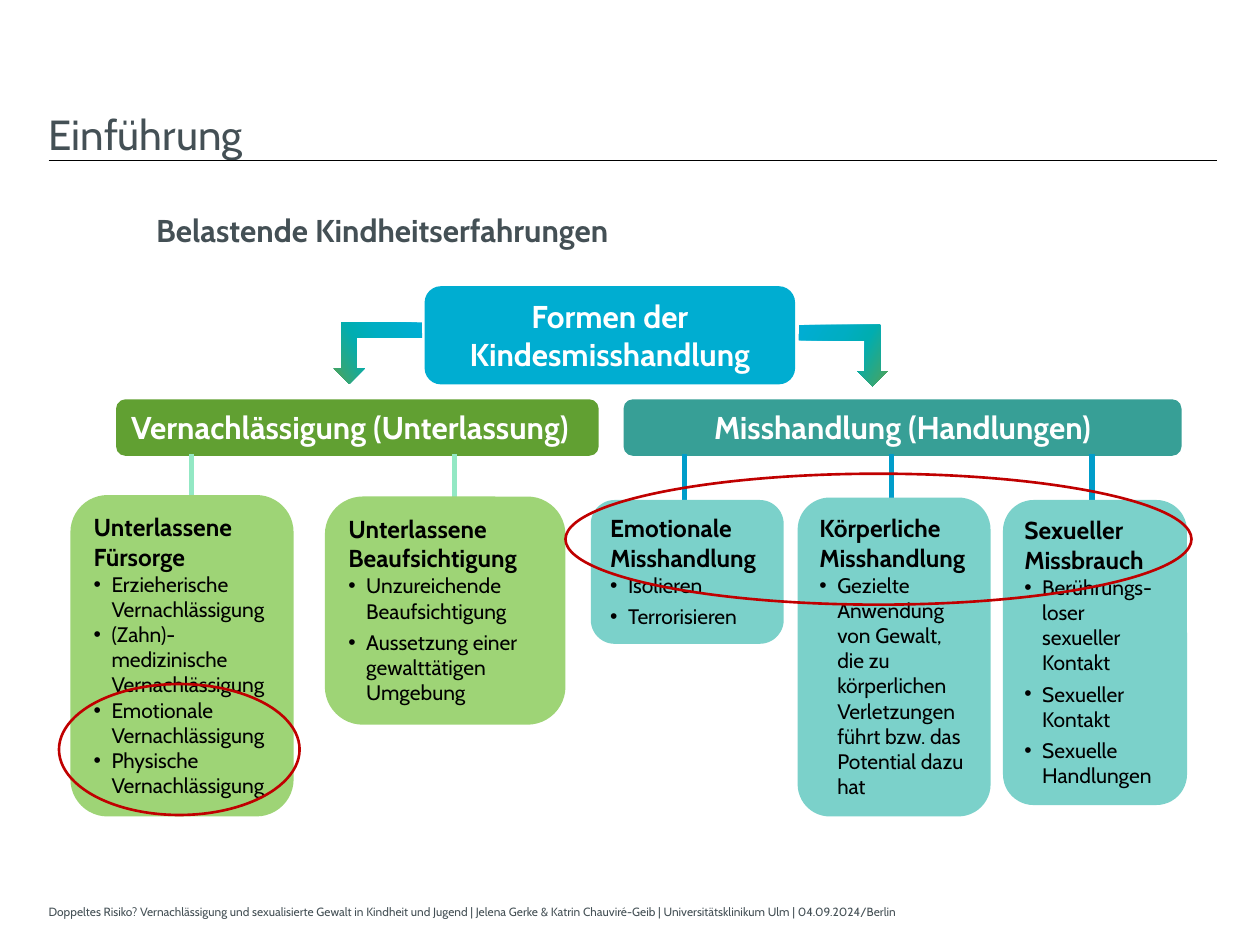
from dataclasses import dataclass

from lxml.etree import SubElement
from pptx import Presentation
from pptx.dml.color import RGBColor
from pptx.enum.shapes import MSO_CONNECTOR, MSO_SHAPE
from pptx.enum.text import MSO_ANCHOR, MSO_AUTO_SIZE, PP_ALIGN
from pptx.oxml.ns import qn
from pptx.util import Cm, Pt


@dataclass(frozen=True)
class Theme:
    """Colours, font and type sizes of the slide."""
    font: str = "Cabin"
    ink: str = "445055"
    black: str = "000000"
    white: str = "FFFFFF"
    blue: str = "00ADD1"
    green: str = "61A032"
    teal: str = "379F96"
    lime: str = "9ED476"
    aqua: str = "7BD1CA"
    mint: str = "93E8C4"
    sea: str = "009DCA"
    red: str = "C00000"
    blend: tuple = ((0, "00ADD4"), (39, "00ADC3"), (62, "00ADB1"),
                    (86, "31A77C"), (100, "61A047"))
    title: float = 24
    head: float = 18
    sub: float = 14
    body: float = 12
    foot: float = 6.8


T = Theme()


def write(frame, words, size=T.body, color=T.black, bold=False,
          align=PP_ALIGN.LEFT, bullet=False, gap=0):
    """Add one formatted paragraph to a text frame."""
    para = frame.paragraphs[0] if not frame.text else frame.add_paragraph()
    if bullet:
        props = para._p.get_or_add_pPr()
        props.set("marL", str(Cm(0.36)))
        props.set("indent", str(-Cm(0.36)))
        SubElement(props, qn("a:buFont"), typeface="Arial")
        SubElement(props, qn("a:buChar"), char="•")
    para.alignment = align
    para.space_before = Pt(gap)
    run = para.add_run()
    run.text = words
    run.font.name, run.font.size, run.font.bold = T.font, Pt(size), bold
    run.font.color.rgb = RGBColor.from_string(color)


def setup(frame, pad=(0.25, 0.13, 0.25, 0.13), anchor=MSO_ANCHOR.TOP):
    """Set wrapping, anchor and margins of a text frame."""
    frame.word_wrap = True
    frame.auto_size = MSO_AUTO_SIZE.NONE
    frame.vertical_anchor = anchor
    frame.margin_left, frame.margin_top, frame.margin_right, frame.margin_bottom = map(Cm, pad)
    return frame


def shape(slide, kind, box, fill=None, line=None):
    """Add a flat preset shape."""
    item = slide.shapes.add_shape(kind, *map(Cm, box))
    item.shadow.inherit = False
    if fill:
        item.fill.solid()
        item.fill.fore_color.rgb = RGBColor.from_string(fill)
    else:
        item.fill.background()
    if line:
        item.line.color.rgb = RGBColor.from_string(line)
        item.line.width = Pt(1.5)
    else:
        item.line.fill.background()
    return item


def rule(slide, start, end, color, width):
    """Add a straight line without shadow."""
    line = slide.shapes.add_connector(MSO_CONNECTOR.STRAIGHT, *map(Cm, start + end))
    line.line.color.rgb = RGBColor.from_string(color)
    line.line.width = Pt(width)
    SubElement(line._element.spPr, qn("a:effectLst"))


def label(slide, box, words, fill, align=PP_ALIGN.CENTER):
    """Add a rounded box with a white heading."""
    item = shape(slide, MSO_SHAPE.ROUNDED_RECTANGLE, box, fill)
    write(setup(item.text_frame), words, size=T.head, color=T.white, bold=True, align=align)


def arrow(slide, box, flip=False):
    """Add a bent arrow that points down, blended from blue to green."""
    item = shape(slide, MSO_SHAPE.BENT_UP_ARROW, box)
    item.rotation = 180
    props = item._element.spPr
    if flip:
        props.find(qn("a:xfrm")).set("flipH", "1")
    grad = SubElement(props, qn("a:gradFill"), rotWithShape="1")
    stops = SubElement(grad, qn("a:gsLst"))
    for pos, color in T.blend:
        stop = SubElement(stops, qn("a:gs"), pos=str(pos * 1000))
        SubElement(stop, qn("a:srgbClr"), val=color)
    SubElement(grad, qn("a:lin"), ang=str(330 * 60000), scaled="0")
    props.replace(props.find(qn("a:noFill")), grad)


def header(slide, box):
    """Place the title, its rule and the subtitle."""
    left, top, width, height = box
    title = slide.shapes.title
    title.left, title.top, title.width, title.height = map(Cm, (left, top, 18, height))
    pad = (0, 0.15, 0, 0.1)
    write(setup(title.text_frame, pad), "Einführung", size=T.title, color=T.ink)
    base = top + 1.2
    rule(slide, (left, base), (left + width, base), T.black, 0.5)
    sub = slide.shapes.add_textbox(*map(Cm, (left + 2.17, top + 2.08, 18.44, 1.68)))
    write(setup(sub.text_frame, pad), "Belastende Kindheitserfahrungen",
          size=T.head, color=T.ink, bold=True)


def root(slide, box):
    """Place the top box with an arrow to each branch."""
    left, top, width, _ = box
    label(slide, box, "Formen der Kindesmisshandlung", T.blue)
    arrow(slide, (left - 1.83, top + 0.73, 1.78, 1.24))
    arrow(slide, (left + width + 0.07, top + 0.78, 1.8, 1.24), flip=True)


def card(slide, box, head, items, fill, gap):
    """Place a rounded card with a heading and bullets."""
    item = shape(slide, MSO_SHAPE.ROUNDED_RECTANGLE, box, fill)
    frame = setup(item.text_frame)
    write(frame, head, size=T.sub, bold=True)
    for num, words in enumerate(items):
        write(frame, words, bullet=True, gap=gap if num else 0)


def branch(slide, box, words, align, colors, shift, cards):
    """Place a branch heading with its cards hung below it."""
    left, top, _, height = box
    fill, tint, stem = colors
    label(slide, box, words, fill, align)
    for (dx, dy, width, depth), head, items, gap in cards:
        x, y = left + dx, top + dy
        mid = x + width / 2 + shift
        rule(slide, (mid, top + height - 0.04), (mid, y), stem, 3)
        card(slide, (x, y, width, depth), head, items, tint, gap)


def footer(slide, box):
    """Place the footer line."""
    item = slide.shapes.add_textbox(*map(Cm, box))
    frame = setup(item.text_frame, (0, 0.13, 0.25, 0.13), MSO_ANCHOR.MIDDLE)
    write(frame, "Doppeltes Risiko? Vernachlässigung und sexualisierte Gewalt in Kindheit und "
          "Jugend | Jelena Gerke & Katrin Chauviré-Geib | Universitätsklinikum Ulm | "
          "04.09.2024/Berlin", size=T.foot, color=T.ink)


NEGLECT = [
    ((-0.92, 1.93, 4.5, 6.48), "Unterlassene Fürsorge",
     ["Erzieherische Vernachlässigung", "(Zahn)-medizinische Vernachlässigung",
      "Emotionale Vernachlässigung", "Physische Vernachlässigung"], 0),
    ((4.21, 1.96, 4.85, 4.6), "Unterlassene Beaufsichtigung",
     ["Unzureichende Beaufsichtigung", "Aussetzung einer gewalttätigen Umgebung"], 3.5),
]
ABUSE = [
    ((-0.66, 2.03, 3.89, 2.9), "Emotionale Misshandlung", ["Isolieren", "Terrorisieren"], 3.5),
    ((3.51, 1.98, 3.89, 6.43), "Körperliche Misshandlung",
     ["Gezielte Anwendung von Gewalt, die zu körperlichen Verletzungen führt bzw. "
      "das Potential dazu hat"], 0),
    ((7.65, 2.03, 3.71, 6.15), "Sexueller Missbrauch",
     ["Berührungs-loser sexueller Kontakt", "Sexueller Kontakt", "Sexuelle Handlungen"], 3.5),
]


def main():
    """Build and save the slide."""
    deck = Presentation()
    deck.slide_width, deck.slide_height = Cm(25.4), Cm(19.05)
    slide = deck.slides.add_slide(deck.slide_layouts[5])
    header(slide, (0.98, 2.03, 23.56, 1.22))
    root(slide, (8.56, 5.77, 7.47, 1.98))
    branch(slide, (2.34, 8.05, 9.73, 1.14), "Vernachlässigung (Unterlassung)",
           PP_ALIGN.LEFT, (T.green, T.lime, T.mint), 0.19, NEGLECT)
    branch(slide, (12.57, 8.05, 11.25, 1.14), "Misshandlung (Handlungen)",
           PP_ALIGN.CENTER, (T.teal, T.aqua, T.sea), -0.06, ABUSE)
    for ring in ((1.19, 13.79, 4.85, 2.64), (11.4, 9.55, 12.62, 2.64)):
        shape(slide, MSO_SHAPE.OVAL, ring, line=T.red)
    footer(slide, (0.98, 18.06, 17.63, 0.64))
    deck.save("out.pptx")


if __name__ == "__main__":
    main()
